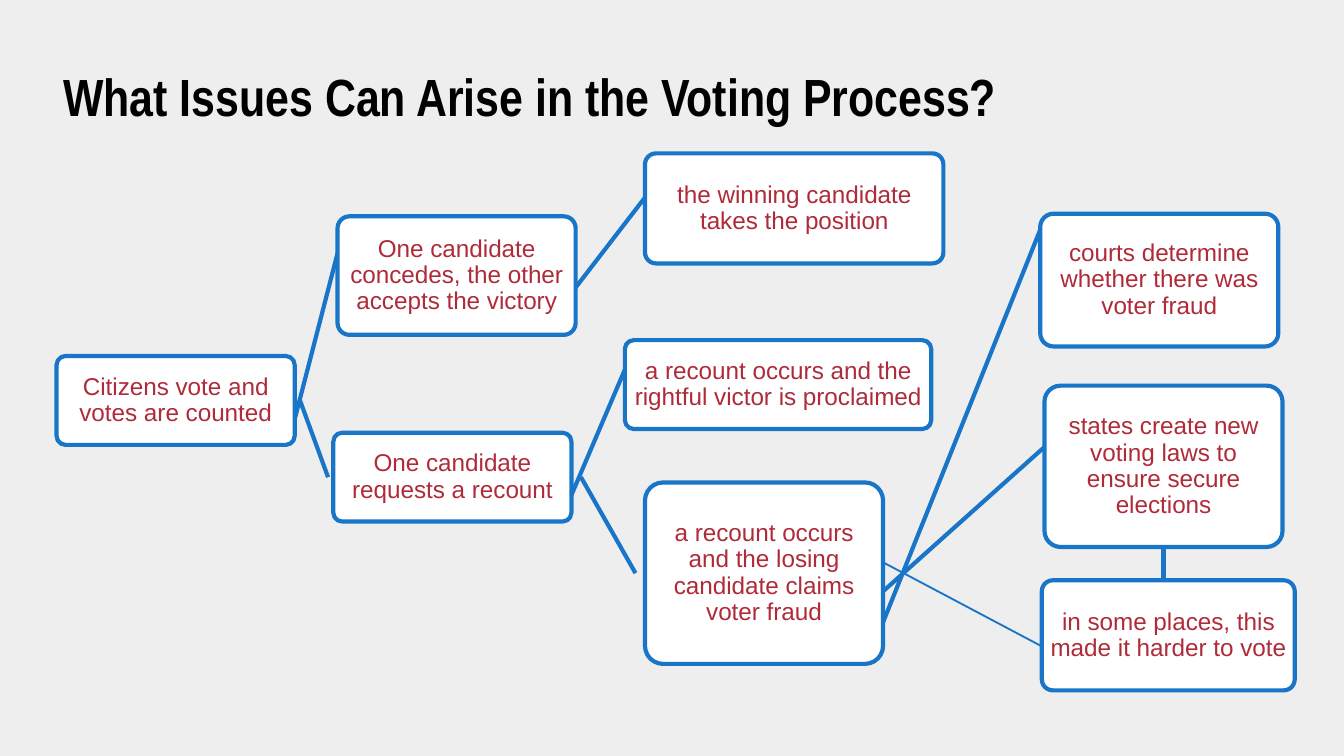
from dataclasses import dataclass
from pptx import Presentation
from pptx import util as u
from pptx.dml.color import RGBColor
from pptx.enum import shapes, text
from pptx.oxml.ns import qn

TITLE = "What Issues Can Arise in the Voting Process?"
STEPS = {
    "vote": ("Citizens vote and votes are counted", 1.07, 6.73, 4.5, 1.68),
    "recount": ("One candidate requests a recount", 6.3, 8.18, 4.5, 1.68),
    "victor": ("a recount occurs and the rightful victor is proclaimed", 11.81, 6.43, 5.79, 1.68),
    "claim": ("a recount occurs and the losing candidate claims voter fraud", 12.19, 9.12, 4.5, 3.43),
    "courts": ("courts determine whether there was voter fraud", 19.66, 4.04, 4.5, 2.51),
    "laws": ("states create new voting laws to ensure secure elections", 19.74, 7.29, 4.5, 3.05),
    "harder": ("in some places, this made it harder to vote", 19.69, 10.97, 4.78, 2.08),
    "concede": ("One candidate concedes, the other accepts the victory", 6.38, 4.09, 4.5, 2.24),
    "winner": ("the winning candidate takes the position", 12.19, 2.9, 5.64, 2.08),
}
LINKS = [
    ("vote", 0.71, "concede", 0.31, 0, 2.25),
    ("vote", 0.5, "recount", 0.5, 0.1, 2.25),
    ("recount", 0.7, "victor", 0.33, 0, 2.25),
    ("recount", 0.5, "claim", 0.5, 0.18, 2.25),
    ("claim", 0.77, "courts", 0.12, 0, 2.25),
    ("claim", 0.6, "laws", 0.38, 0, 2.25),
    ("claim", 0.44, "harder", 0.6, 0, 1),
    ("concede", 0.6, "winner", 0.4, 0, 2.25),
]


@dataclass
class Theme:
    back: str = "EEEEEE"
    fill: str = "FFFFFF"
    line: str = "1875C8"
    ink: str = "AF2B39"
    head: str = "000000"
    font: str = "Arial"
    slim: str = "Arial Narrow"
    body: float = 13
    title: float = 28
    edge: float = 2.25


theme = Theme()


def paint(color):
    return RGBColor.from_string(color)


def write(frame, words, font, size, color, align, bold=False, inset=0):
    frame.word_wrap = True
    frame.margin_left = frame.margin_right = u.Cm(inset)
    frame.margin_top = frame.margin_bottom = u.Cm(inset)
    para = frame.paragraphs[0]
    para.alignment = align
    para.line_spacing = 0.9
    run = para.add_run()
    run.text = words
    run.font.name = font
    run.font.size = u.Pt(size)
    run.font.bold = bold
    run.font.color.rgb = paint(color)


def link(slide, start, end, width):
    ends = [u.Cm(n) for n in (*start, *end)]
    line = slide.shapes.add_connector(shapes.MSO_CONNECTOR.STRAIGHT, *ends)
    line.line.color.rgb = paint(theme.line)
    line.line.width = u.Pt(width)
    props = line._element.spPr
    props.append(props.makeelement(qn("a:effectLst"), {}))


def step(slide, words, *area):
    box = slide.shapes.add_shape(
        shapes.MSO_SHAPE.ROUNDED_RECTANGLE, *[u.Cm(n) for n in area])
    box.adjustments[0] = 0.1
    box.shadow.inherit = False
    box.fill.solid()
    box.fill.fore_color.rgb = paint(theme.fill)
    box.line.color.rgb = paint(theme.line)
    box.line.width = u.Pt(theme.edge)
    frame = box.text_frame
    frame.vertical_anchor = text.MSO_ANCHOR.MIDDLE
    write(frame, words, theme.font, theme.body, theme.ink,
          text.PP_ALIGN.CENTER, inset=0.1)


def main():
    deck = Presentation()
    deck.slide_width, deck.slide_height = u.Cm(25.4), u.Cm(14.29)
    slide = deck.slides.add_slide(deck.slide_layouts[6])
    slide.background.fill.solid()
    slide.background.fill.fore_color.rgb = paint(theme.back)

    title = slide.shapes.add_textbox(u.Cm(1.2), u.Cm(1.35), u.Cm(21.6), u.Cm(1.07))
    write(title.text_frame, TITLE, theme.slim, theme.title, theme.head,
          text.PP_ALIGN.LEFT, bold=True)

    for first, out, last, into, gap, width in LINKS:
        _, left, top, wide, high = STEPS[first]
        _, x, y, _, tall = STEPS[last]
        link(slide, (left + wide + gap, top + high * out),
             (x - gap, y + tall * into), width)

    _, left, top, wide, high = STEPS["laws"]
    mid = left + wide / 2
    link(slide, (mid, top + high), (mid, STEPS["harder"][2]), theme.edge)

    for item in STEPS.values():
        step(slide, *item)
    deck.save("out.pptx")


if __name__ == "__main__":
    main()
